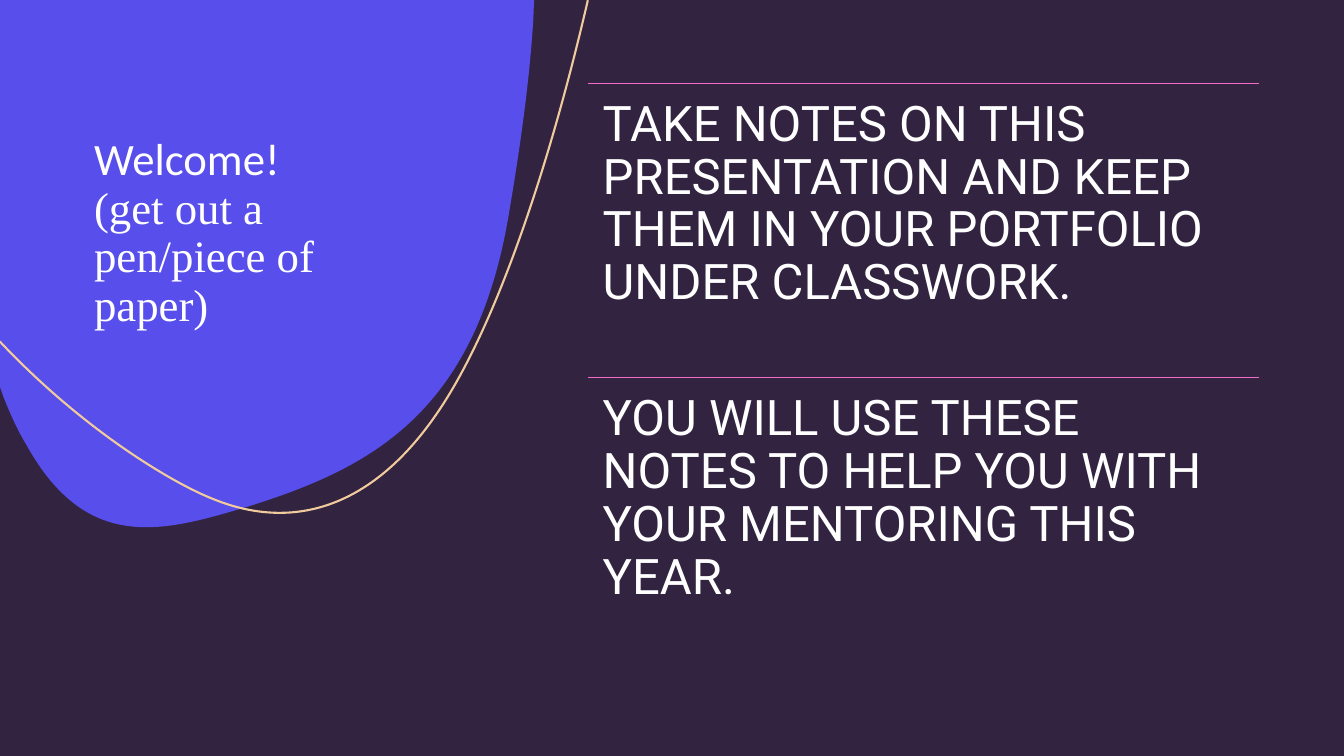
from lxml import etree
from pptx import Presentation
from pptx.dml.color import RGBColor
from pptx.enum import shapes, text
from pptx.oxml.ns import qn
from pptx.util import Cm, Pt

PLUM = RGBColor(0x32, 0x24, 0x41)
VIOLET = RGBColor(0x57, 0x4E, 0xEB)
SAND = RGBColor(0xF1, 0xCB, 0x9C)
PINK = RGBColor(0xEE, 0x6E, 0xC7)
WHITE = RGBColor(0xFF, 0xFF, 0xFF)

# Outlines in cm: the first pair is the start, then a pair is a straight step
# and three pairs are a Bezier curve
BLOB = [
    [(13.46, 0)], [(13.44, 0.51)],
    [(13.34, 2.08), (13.11, 3.71), (12.83, 5.36)],
    [(11.99, 10.44), (9.32, 11.81), (6.2, 12.78)],
    [(4.09, 13.41), (2.18, 13.94), (0.66, 11.2)],
    [(0.43, 10.82), (0.25, 10.41), (0.08, 9.98)],
    [(0, 9.75)], [(0, 0)], [(13.46, 0)],
]
ARC = [
    [(14.81, 0)], [(14.81, 0.03)],
    [(13.89, 3.99), (12.73, 7.44), (11.53, 9.58)],
    [(9.73, 12.8), (7.47, 13.44), (5.36, 12.57)],
    [(4.39, 12.19), (2.13, 10.87), (0, 8.61)],
    [(0, 8.59)],
]
NOTES = [
    "TAKE NOTES ON THIS PRESENTATION AND KEEP THEM IN YOUR PORTFOLIO UNDER CLASSWORK.",
    "YOU WILL USE THESE NOTES TO HELP YOU WITH YOUR MENTORING THIS YEAR.",
]


def draw_curves(slide, steps, width, height):
    """Add a freeform from the slide's top left corner, with true Bezier curves."""
    builder = slide.shapes.build_freeform(0, 0)
    builder.add_line_segments([(Cm(width), Cm(height))], close=False)
    outline = builder.convert_to_shape()
    outline.shadow.inherit = False
    track = next(outline._element.iter(qn("a:path")))
    for child in list(track):
        track.remove(child)
    for number, step in enumerate(steps):
        kind = "a:moveTo" if number == 0 else "a:lnTo" if len(step) == 1 else "a:cubicBezTo"
        move = etree.SubElement(track, qn(kind))
        for x, y in step:
            etree.SubElement(move, qn("a:pt"), x=str(Cm(x)), y=str(Cm(y)))
    if steps[0] == steps[-1]:
        etree.SubElement(track, qn("a:close"))
    return outline


def add_words(slide, words, box, fonts, size):
    """Add a white text box; each run takes the next font name."""
    block = slide.shapes.add_textbox(*[Cm(length) for length in box])
    frame = block.text_frame
    frame.word_wrap = True
    frame.text = words
    frame.paragraphs[0].line_spacing = 0.9
    for run, font in zip(frame.paragraphs[0].runs, fonts):
        run.font.name = font
        run.font.size = Pt(size)
        run.font.color.rgb = WHITE
    return frame


prs = Presentation()
prs.slide_width, prs.slide_height = Cm(33.87), Cm(19.05)
slide = prs.slides.add_slide(prs.slide_layouts[6])
slide.background.fill.solid()
slide.background.fill.fore_color.rgb = PLUM

blob = draw_curves(slide, BLOB, 13.46, 13.28)
blob.fill.solid()
blob.fill.fore_color.rgb = VIOLET
blob.line.fill.background()

arc = draw_curves(slide, ARC, 14.81, 12.93)
arc.fill.background()
arc.line.color.rgb = SAND
arc.line.width = Pt(1.5)

welcome = add_words(slide, "Welcome!\v(get out a pen/piece of paper)",
                    (2.12, 2.11, 8.47, 6.35), ("Calibri", "Times New Roman"), 32)
welcome.vertical_anchor = text.MSO_ANCHOR.BOTTOM

left, width, row_height = 14.81, 16.93, 7.41
for row, note in enumerate(NOTES):
    top = 2.11 + row * row_height
    rule = slide.shapes.add_connector(shapes.MSO_CONNECTOR.STRAIGHT,
                                      Cm(left), Cm(top), Cm(left + width), Cm(top))
    rule.line.color.rgb = PINK
    rule.line.width = Pt(1)
    etree.SubElement(rule._element.spPr, qn("a:effectLst"))

    instruction = add_words(slide, note, (left, top, width, row_height), ("Roboto",), 35)
    instruction.margin_left = instruction.margin_right = Cm(0.38)
    instruction.margin_top = instruction.margin_bottom = Cm(0.38)

prs.save("out.pptx")
